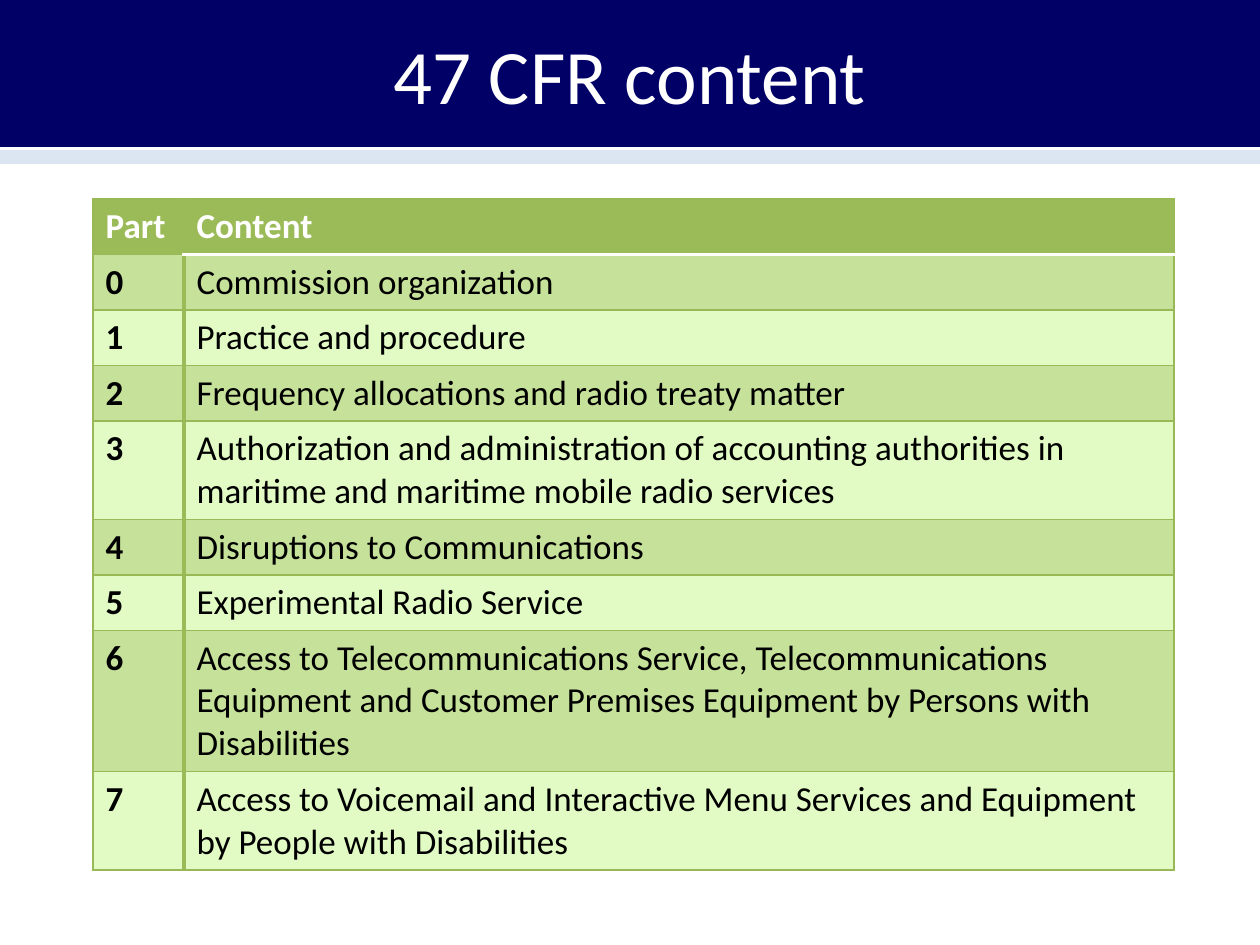
from lxml import etree
from pptx import Presentation
from pptx.dml.color import RGBColor
from pptx.enum import shapes, text
from pptx.oxml.ns import qn
from pptx.util import Pt

TITLE = "47 CFR content"
HEADER = ("Part", "Content")
# Content of each part, with the number of text lines it fills
PARTS = [
    ("Commission organization", 1),
    ("Practice and procedure", 1),
    ("Frequency allocations and radio treaty matter", 1),
    ("Authorization and administration of accounting authorities in "
     "maritime and maritime mobile radio services", 2),
    ("Disruptions to Communications", 1),
    ("Experimental Radio Service", 1),
    ("Access to Telecommunications Service, Telecommunications Equipment "
     "and Customer Premises Equipment by Persons with Disabilities", 3),
    ("Access to Voicemail and Interactive Menu Services and Equipment "
     "by People with Disabilities", 2),
]

FONT = "Calibri"
NAVY = RGBColor(0x00, 0x00, 0x66)
PALE_BLUE = RGBColor(0xDC, 0xE6, 0xF2)
WHITE = RGBColor(0xFF, 0xFF, 0xFF)
BLACK = RGBColor(0x00, 0x00, 0x00)
GREEN = RGBColor(0x9B, 0xBB, 0x59)
BORDER = RGBColor(0x98, 0xB9, 0x55)
DARK_ROW = RGBColor(0xC6, 0xE1, 0x99)
LIGHT_ROW = RGBColor(0xE2, 0xFB, 0xC4)

PAGE_W, PAGE_H = 1260, 945
LINE_H, CELL_PAD = 43, 12
COLUMNS = (91, 990)


def px(count):
    return round(count * 914400 / 126)


def style(font, size, color, bold=False):
    font.name, font.size, font.bold = FONT, Pt(size), bold
    font.color.rgb = color


def set_borders(cell, **sides):
    """Draw cell sides, each given as (colour, points); call before the fill."""
    properties = cell._tc.get_or_add_tcPr()
    for side in ("L", "R", "T", "B"):
        color, points = sides.get(side, (BORDER, 0.75))
        line = etree.SubElement(properties, qn("a:ln" + side), w=str(Pt(points)))
        fill = etree.SubElement(line, qn("a:solidFill"))
        etree.SubElement(fill, qn("a:srgbClr"), val=str(color))


deck = Presentation()
deck.slide_width, deck.slide_height = px(PAGE_W), px(PAGE_H)
page = deck.slides.add_slide(deck.slide_layouts[5])

# Title
title = page.shapes.title
title.left, title.top, title.width, title.height = map(px, (63, -5, 1134, 157))
title.text_frame.text = TITLE
title.text_frame.vertical_anchor = text.MSO_ANCHOR.MIDDLE
heading = title.text_frame.paragraphs[0]
heading.alignment = text.PP_ALIGN.CENTER
style(heading.runs[0].font, 44, WHITE)

# Band and rule behind the title
band = page.shapes.add_shape(shapes.MSO_SHAPE.RECTANGLE, 0, px(-10), px(PAGE_W), px(157))
band.shadow.inherit = False
band.fill.solid()
band.fill.fore_color.rgb = NAVY
band.line.fill.background()
rule = page.shapes.add_connector(
    shapes.MSO_CONNECTOR.STRAIGHT, 0, px(157), px(PAGE_W), px(157))
rule.line.color.rgb = PALE_BLUE
rule.line.width = Pt(8)
etree.SubElement(rule.element.spPr, qn("a:effectLst"))
for backdrop in (band, rule):
    title.element.addprevious(backdrop.element)

# Table
rows = [(HEADER, 1)] + [((str(number), content), lines)
                        for number, (content, lines) in enumerate(PARTS)]
heights = [lines * LINE_H + CELL_PAD for _, lines in rows]
table = page.shapes.add_table(
    len(rows), len(COLUMNS), px(93), px(199), px(sum(COLUMNS)), px(sum(heights))).table
table.horz_banding = False
for column, width in zip(table.columns, COLUMNS):
    column.width = px(width)

for r, (labels, _) in enumerate(rows):
    table.rows[r].height = px(heights[r])
    for c, label in enumerate(labels):
        cell = table.cell(r, c)
        sides = {"L" if c else "R": (GREEN, 2)}
        if c and r < 2:
            sides["T" if r else "B"] = (WHITE, 2)
        set_borders(cell, **sides)
        cell.fill.solid()
        cell.fill.fore_color.rgb = GREEN if r == 0 else DARK_ROW if r % 2 else LIGHT_ROW
        cell.text_frame.text = label
        style(cell.text_frame.paragraphs[0].runs[0].font, 20,
              BLACK if r else WHITE, bold=r == 0 or c == 0)

deck.save("out.pptx")
